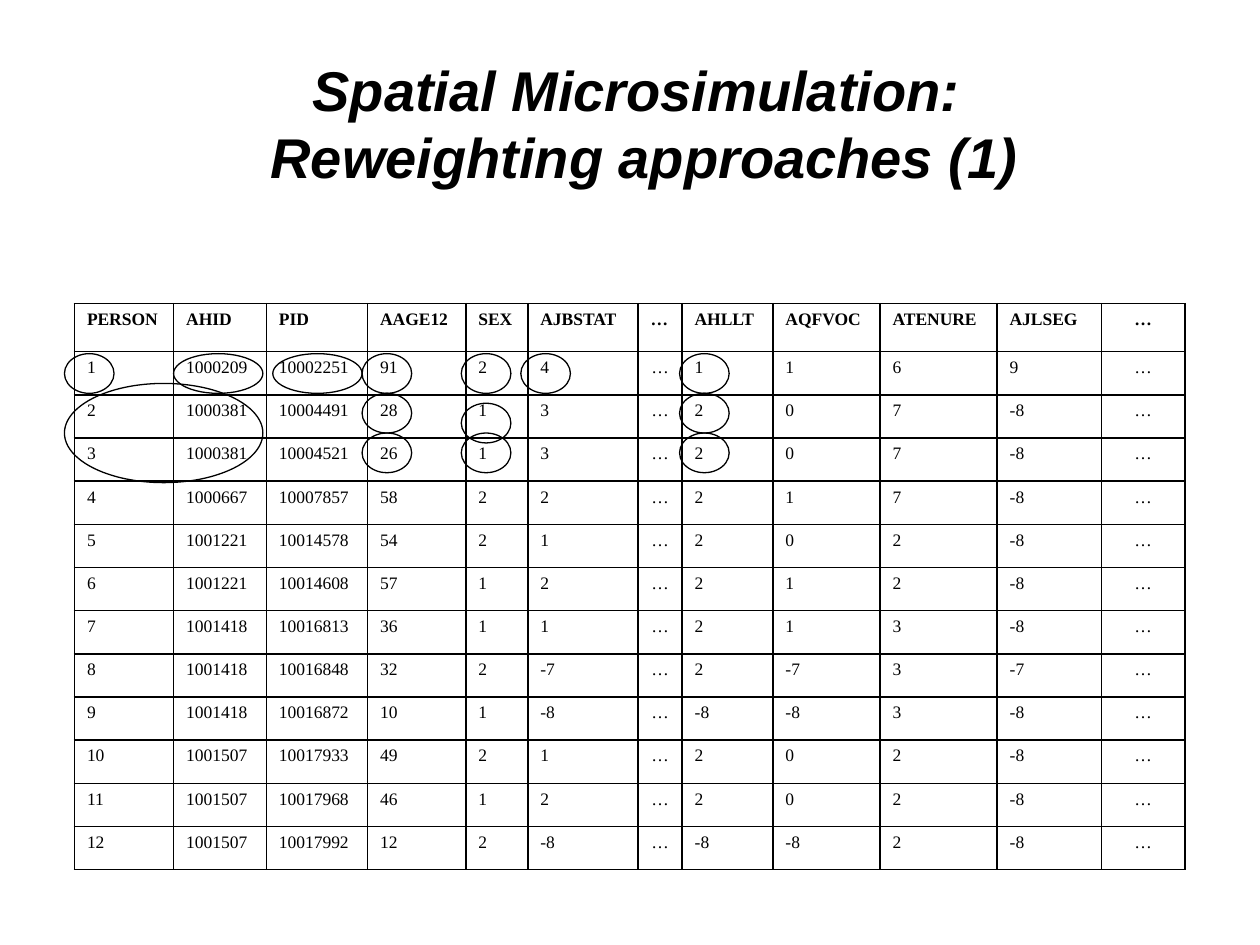
from dataclasses import dataclass

from lxml.etree import SubElement
from pptx import Presentation
from pptx.dml.color import RGBColor
from pptx.enum.shapes import MSO_SHAPE as Shape
from pptx.enum.text import MSO_ANCHOR as Anchor, PP_ALIGN as Align
from pptx.oxml.ns import qn
from pptx.util import Cm, Pt

TITLE = ("Spatial Microsimulation: ", "Reweighting approaches (1)")
HEADER = "PERSON AHID PID AAGE12 SEX AJBSTAT … AHLLT AQFVOC ATENURE AJLSEG …"
PEOPLE = (
    "1 1000209 10002251 91 2 4 … 1 1 6 9 …",
    "2 1000381 10004491 28 1 3 … 2 0 7 -8 …",
    "3 1000381 10004521 26 1 3 … 2 0 7 -8 …",
    "4 1000667 10007857 58 2 2 … 2 1 7 -8 …",
    "5 1001221 10014578 54 2 1 … 2 0 2 -8 …",
    "6 1001221 10014608 57 1 2 … 2 1 2 -8 …",
    "7 1001418 10016813 36 1 1 … 2 1 3 -8 …",
    "8 1001418 10016848 32 2 -7 … 2 -7 3 -7 …",
    "9 1001418 10016872 10 1 -8 … -8 -8 3 -8 …",
    "10 1001507 10017933 49 2 1 … 2 0 2 -8 …",
    "11 1001507 10017968 46 1 2 … 2 0 2 -8 …",
    "12 1001507 10017992 12 2 -8 … -8 -8 2 -8 …",
)
COL_WIDTHS = (2.0, 1.87, 2.04, 1.98, 1.25, 2.22, 0.89, 1.83, 2.16, 2.36, 2.1, 1.69)
HEADER_H, ROW_H = 0.97, 0.87
TABLE_LEFT, TABLE_TOP = 1.5, 6.12

RING_H, SMALL, WIDE = 0.8, 1.0, 1.8
RING_ROWS = (
    (7.13, ((1.3, SMALL), (3.5, WIDE), (5.5, WIDE), (7.3, SMALL),
            (9.3, SMALL), (10.5, SMALL), (13.7, SMALL))),
    (7.93, ((7.3, SMALL), (13.7, SMALL))),
    (8.13, ((9.3, SMALL),)),
    (8.73, ((7.3, SMALL), (9.3, SMALL), (13.7, SMALL))),
)
HOUSEHOLD_RING = (1.3, 7.73, 4.0, 2.0)


@dataclass(frozen=True)
class Theme:
    ink: RGBColor = RGBColor(0, 0, 0)
    title_font: str = "Arial"
    table_font: str = "Times New Roman"
    title_size: Pt = Pt(32)
    table_size: Pt = Pt(10)
    border: Pt = Pt(1)
    ring: Pt = Pt(0.75)


THEME = Theme()


def style(p, font, size, bold, italic=False):
    for r in p.runs:
        r.font.name, r.font.size = font, size
        r.font.bold, r.font.italic = bold, italic
        r.font.color.rgb = THEME.ink


def add_title(s):
    tf = s.shapes.add_textbox(Cm(0.58), Cm(0.58), Cm(24.82), Cm(3.38)).text_frame
    tf.word_wrap = True
    tf.vertical_anchor = Anchor.BOTTOM
    tf.text = "\n".join(TITLE)
    for p in tf.paragraphs:
        p.alignment = Align.CENTER
        style(p, THEME.title_font, THEME.title_size, True, True)


def add_borders(cell):
    tc_pr = cell._tc.get_or_add_tcPr()
    for side in ("a:lnL", "a:lnR", "a:lnT", "a:lnB"):
        ln = SubElement(tc_pr, qn(side), w=str(int(THEME.border)))
        fill = SubElement(ln, qn("a:solidFill"))
        SubElement(fill, qn("a:srgbClr"), val=str(THEME.ink))


def add_people_table(s):
    rows = [line.split() for line in (HEADER, *PEOPLE)]
    heights = [HEADER_H] + [ROW_H] * len(PEOPLE)
    frame = s.shapes.add_table(len(rows), len(COL_WIDTHS), Cm(TABLE_LEFT), Cm(TABLE_TOP),
                               Cm(sum(COL_WIDTHS)), Cm(sum(heights)))
    table = frame.table
    table.first_row = table.horz_banding = False
    for col, width in zip(table.columns, COL_WIDTHS):
        col.width = Cm(width)
    last = len(COL_WIDTHS) - 1
    for i, (row, height) in enumerate(zip(rows, heights)):
        table.rows[i].height = Cm(height)
        for j, value in enumerate(row):
            cell = table.cell(i, j)
            cell.text_frame.text = value
            p = cell.text_frame.paragraphs[0]
            centred = value == "…" and (i > 0 or j == last)
            p.alignment = Align.CENTER if centred else Align.JUSTIFY
            style(p, THEME.table_font, THEME.table_size, i == 0)
            add_borders(cell)
            cell.fill.background()


def add_ring(s, *box):
    sp = s.shapes.add_shape(Shape.OVAL, *map(Cm, box))
    sp.shadow.inherit = False
    sp.fill.background()
    sp.line.color.rgb = THEME.ink
    sp.line.width = THEME.ring


def main():
    """Build the reweighting slide: title, person table and ringed values."""
    prs = Presentation()
    prs.slide_width, prs.slide_height = Cm(25.4), Cm(19.05)
    s = prs.slides.add_slide(prs.slide_layouts[6])
    add_title(s)
    add_people_table(s)
    for top, rings in RING_ROWS:
        for left, width in rings:
            add_ring(s, left, top, width, RING_H)
    add_ring(s, *HOUSEHOLD_RING)
    prs.save("out.pptx")


if __name__ == "__main__":
    main()
